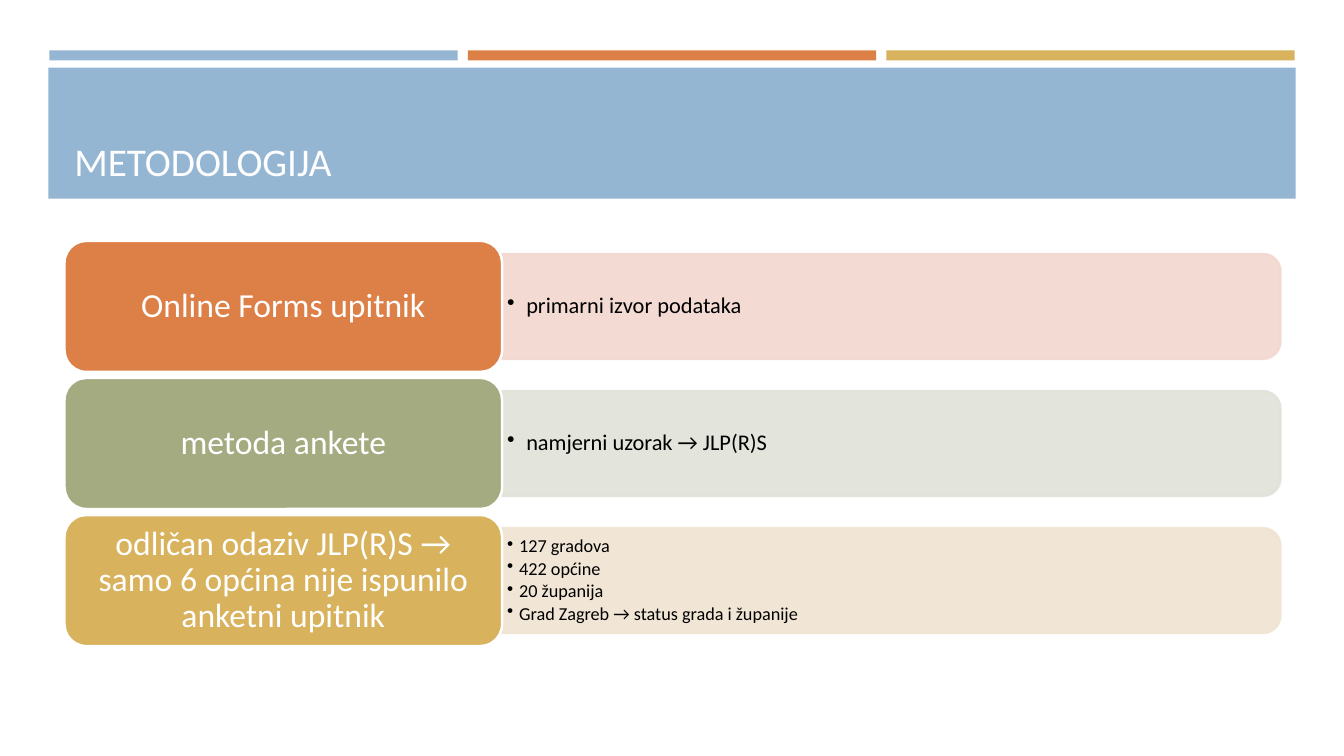
"""Build the METODOLOGIJA slide: a title band above three labelled rows."""
from lxml.etree import SubElement
from pptx import Presentation
from pptx.dml.color import RGBColor
from pptx.enum.shapes import MSO_SHAPE
from pptx.enum.text import MSO_ANCHOR, PP_ALIGN
from pptx.oxml.ns import qn
from pptx.util import Inches, Pt

COLOURS = {
    "blue": "94B6D2", "orange": "DD8047", "gold": "D8B25C", "green": "A5AB81",
    "pink": "F2D8CF", "grey": "E1E2D8", "sand": "F0E4D2",
    "white": "FFFFFF", "title": "FFFEFF", "black": "000000",
}
FONT = "Calibri"
TITLE = "METODOLOGIJA"
STRIPES = ["blue", "orange", "gold"]
ROWS = [
    {"label": "Online Forms upitnik", "fill": "orange", "tint": "pink",
     "size": 16, "indent": 0.19, "points": ["primarni izvor podataka"]},
    {"label": "metoda ankete", "fill": "green", "tint": "grey",
     "size": 16, "indent": 0.19, "points": ["namjerni uzorak → JLP(R)S"]},
    {"label": "odličan odaziv JLP(R)S → samo 6 općina nije ispunilo anketni upitnik",
     "fill": "gold", "tint": "sand", "size": 13, "indent": 0.12,
     "points": ["127 gradova", "422 općine", "20 županija",
                "Grad Zagreb → status grada i županije"]},
]

SLIDE_WIDTH, SLIDE_HEIGHT = 13.33, 7.5
STRIPE_LEFT, STRIPE_TOP, STRIPE_WIDTH, STRIPE_PITCH = 0.49, 0.5, 4.05, 4.15
ROW_LEFT, ROW_TOP, ROW_HEIGHT, ROW_PITCH = 0.64, 2.39, 1.3, 1.36
LABEL_WIDTH, PANEL_WIDTH, PANEL_HEIGHT = 4.34, 7.72, 1.04
PANEL_LEFT = ROW_LEFT + LABEL_WIDTH


def colour(name):
    return RGBColor.from_string(COLOURS[name])


def add_block(slide, kind, place, fill, line=None, opacity=None):
    block = slide.shapes.add_shape(kind, *map(Inches, place))
    block.shadow.inherit = False
    block.fill.solid()
    block.fill.fore_color.rgb = colour(fill)
    if line:
        block.line.color.rgb = colour(line)
        block.line.width = Pt(1.75)
    else:
        block.line.fill.background()
    if opacity:
        for tone in block._element.spPr.iter(qn("a:srgbClr")):
            SubElement(tone, qn("a:alpha"), val=str(opacity * 1000))
    return block


def write(shape, lines, size, ink, anchor, align=PP_ALIGN.LEFT, margins=(0.1, 0.05)):
    frame = shape.text_frame
    frame.word_wrap = True
    frame.vertical_anchor = anchor
    frame.margin_left = frame.margin_right = Inches(margins[0])
    frame.margin_top = frame.margin_bottom = Inches(margins[1])
    frame.text = "\n".join(lines)
    for para in frame.paragraphs:
        para.alignment = align
        para.line_spacing = 0.9
        for span in para.runs:
            span.font.size = Pt(size)
            span.font.name = FONT
            span.font.color.rgb = colour(ink)
    return frame.paragraphs


def add_bullet(para, indent):
    para.space_after = Pt(2)
    properties = para._p.get_or_add_pPr()
    properties.set("marL", str(Inches(indent)))
    properties.set("indent", str(-Inches(indent)))
    SubElement(properties, qn("a:buChar"), char="•")


def add_header(slide):
    for column, fill in enumerate(STRIPES):
        left = STRIPE_LEFT + column * STRIPE_PITCH
        add_block(slide, MSO_SHAPE.RECTANGLE, (left, STRIPE_TOP, STRIPE_WIDTH, 0.1), fill)
    add_block(slide, MSO_SHAPE.RECTANGLE, (0.48, 0.67, 12.37, 1.3), "blue")
    box = slide.shapes.add_textbox(*map(Inches, (0.64, 0.77, 12.06, 1.11)))
    write(box, [TITLE], 28, "title", MSO_ANCHOR.BOTTOM)


def add_row(slide, number, row):
    top = ROW_TOP + number * ROW_PITCH
    middle = top + ROW_HEIGHT / 2
    panel = (PANEL_LEFT + (PANEL_WIDTH - PANEL_HEIGHT) / 2, middle - PANEL_WIDTH / 2,
             PANEL_HEIGHT, PANEL_WIDTH)
    add_block(slide, MSO_SHAPE.ROUND_2_SAME_RECTANGLE, panel,
              row["tint"], row["tint"], 90).rotation = 90
    box = slide.shapes.add_textbox(*map(Inches, (
        PANEL_LEFT, middle - 0.47, PANEL_WIDTH - 0.05, 0.94)))
    for para in write(box, row["points"], row["size"], "black",
                      MSO_ANCHOR.MIDDLE, margins=(0.05, 0.03)):
        add_bullet(para, row["indent"])
    label = add_block(slide, MSO_SHAPE.ROUNDED_RECTANGLE,
                      (ROW_LEFT, top, LABEL_WIDTH, ROW_HEIGHT), row["fill"], "white")
    write(label, [row["label"]], 24, "white", MSO_ANCHOR.MIDDLE, PP_ALIGN.CENTER)


def main():
    deck = Presentation()
    deck.slide_width, deck.slide_height = Inches(SLIDE_WIDTH), Inches(SLIDE_HEIGHT)
    slide = deck.slides.add_slide(deck.slide_layouts[6])
    add_header(slide)
    for number, row in enumerate(ROWS):
        add_row(slide, number, row)
    deck.save("out.pptx")


if __name__ == "__main__":
    main()
